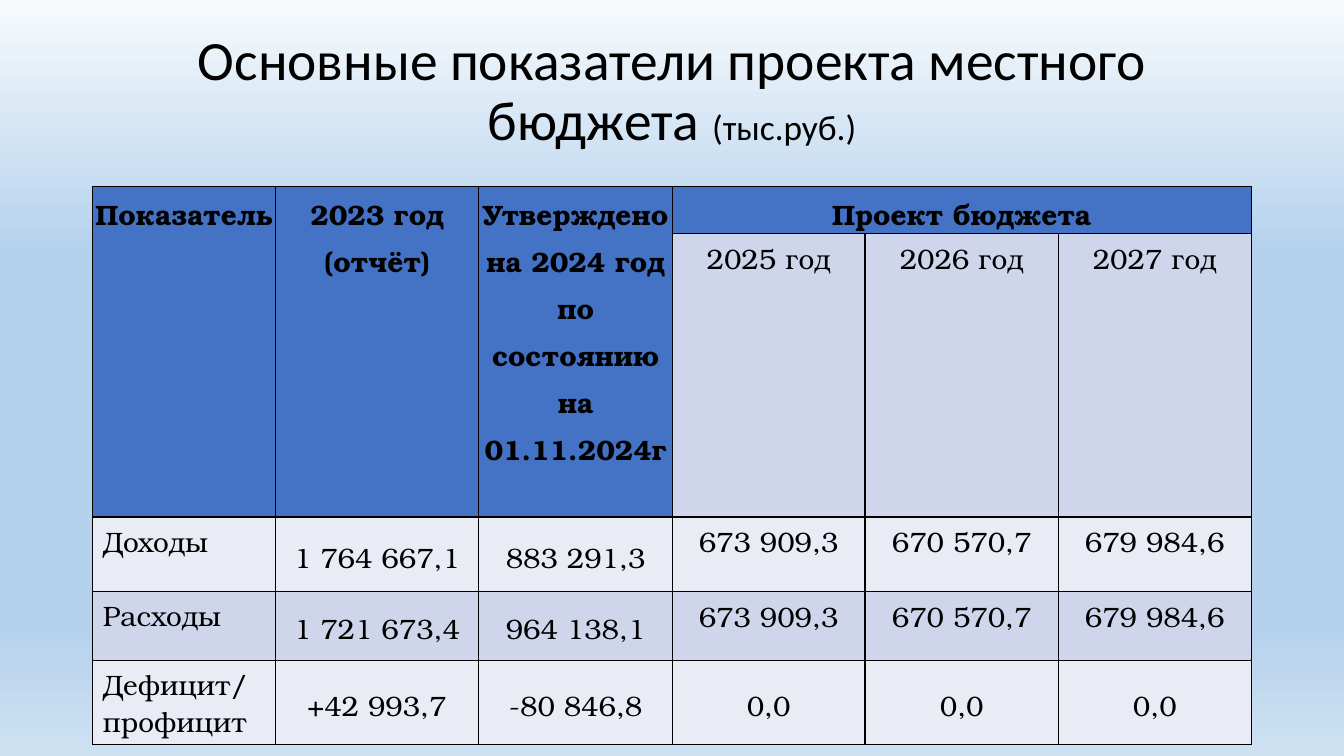
from lxml import etree
from pptx import Presentation
from pptx.dml.color import RGBColor
from pptx.enum.text import MSO_ANCHOR, PP_ALIGN
from pptx.oxml.ns import qn
from pptx.util import Pt

TOP, MIDDLE = MSO_ANCHOR.TOP, MSO_ANCHOR.MIDDLE
LEFT, CENTER = PP_ALIGN.LEFT, PP_ALIGN.CENTER
EMU_PER_PX = 9144
BLANK_LAYOUT = 6
COLORS = {
    "ink": "000000", "header": "4472C4", "dark_band": "CFD5EA", "light_band": "E9EBF5",
    "sky_top": "F7FAFD", "sky": "B5D2EC", "sky_bottom": "CEE1F2",
}
SKY_STOPS = [(0, "sky_top"), (33, "sky"), (83, "sky"), (100, "sky_bottom")]
TITLE_FONT, TABLE_FONT = "Calibri", "TeX Gyre Bonum"
COLUMN_WIDTHS = [181, 202, 192, 191, 192, 191]
ROW_HEIGHTS = [47, 281, 74, 68, 84]
ROW_FILLS = ["header", "dark_band", "light_band", "dark_band", "light_band"]
BUDGET_ROWS = [
    ["Показатель", "2023 год (отчёт)",
     "Утверждено на 2024 год\nпо состоянию на 01.11.2024г", "Проект бюджета", "", ""],
    ["", "", "", "2025 год", "2026 год", "2027 год"],
    ["Доходы", "1 764 667,1", "883 291,3", "673 909,3", "670 570,7", "679 984,6"],
    ["Расходы", "1 721 673,4", "964 138,1", "673 909,3", "670 570,7", "679 984,6"],
    ["Дефицит/профицит", "+42 993,7", "-80 846,8", "0,0", "0,0", "0,0"],
]
HEADER_ROWS = 2
YEAR_COLUMN = 3
BALANCE_ROW = 4


def px(length):
    return length * EMU_PER_PX


def color(name):
    return RGBColor.from_string(COLORS[name])


def style_span(span, font, size, bold=False):
    span.font.name = font
    span.font.size = Pt(size)
    span.font.bold = bold
    span.font.color.rgb = color("ink")


def paint_background(page):
    fill = page.background.fill
    fill.gradient()
    fill.gradient_angle = 270
    stops = page.element.find(".//" + qn("a:gsLst"))
    for stop in list(stops):
        stops.remove(stop)
    for percent, name in SKY_STOPS:
        stop = etree.SubElement(stops, qn("a:gs"), pos=str(percent * 1000))
        etree.SubElement(stop, qn("a:srgbClr"), val=COLORS[name])


def add_title(page, title, unit):
    box = page.shapes.add_textbox(px(92), px(40), px(1149), px(145))
    frame = box.text_frame
    frame.word_wrap = True
    frame.vertical_anchor = MIDDLE
    frame.margin_bottom = px(47)
    para = frame.paragraphs[0]
    para.alignment = CENTER
    para.line_spacing = 0.9
    for text, size in [(title, 39.6), (unit, 25.2)]:
        span = para.add_run()
        span.text = text
        style_span(span, TITLE_FONT, size)


def add_borders(cell):
    properties = cell._tc.get_or_add_tcPr()
    for position, side in enumerate(["a:lnL", "a:lnR", "a:lnT", "a:lnB"]):
        line = etree.Element(qn(side), w=str(Pt(1)))
        fill = etree.SubElement(line, qn("a:solidFill"))
        etree.SubElement(fill, qn("a:srgbClr"), val=COLORS["ink"])
        properties.insert(position, line)


def fill_cell(cell, text, row, column):
    is_header = row == 0 or (row < HEADER_ROWS and column < YEAR_COLUMN)
    is_label = row >= HEADER_ROWS and column == 0
    is_forecast = HEADER_ROWS <= row < BALANCE_ROW and column >= YEAR_COLUMN
    is_middle = row >= HEADER_ROWS and not is_label and not is_forecast
    cell.fill.solid()
    cell.fill.fore_color.rgb = color("header" if is_header else ROW_FILLS[row])
    add_borders(cell)
    cell.vertical_anchor = MIDDLE if is_middle else TOP
    if not is_label:
        cell.margin_left = cell.margin_right = px(2)
        cell.margin_top = cell.margin_bottom = 0
    cell.text_frame.text = text
    for para in cell.text_frame.paragraphs:
        para.alignment = LEFT if is_label else CENTER
        para.line_spacing = 1.0 if is_label else 1.15
        if is_forecast:
            para.space_after = Pt(10)
        for span in para.runs:
            style_span(span, TABLE_FONT, 20, is_header)


def add_budget_table(page):
    frame = page.shapes.add_table(
        len(ROW_HEIGHTS), len(COLUMN_WIDTHS), px(92), px(185),
        px(sum(COLUMN_WIDTHS)), px(sum(ROW_HEIGHTS)))
    table = frame.table
    for column, width in zip(table.columns, COLUMN_WIDTHS):
        column.width = px(width)
    for row, height in zip(table.rows, ROW_HEIGHTS):
        row.height = px(height)
    for row, texts in enumerate(BUDGET_ROWS):
        for column, text in enumerate(texts):
            fill_cell(table.cell(row, column), text, row, column)
    for column in range(YEAR_COLUMN):
        table.cell(0, column).merge(table.cell(1, column))
    table.cell(0, YEAR_COLUMN).merge(table.cell(0, len(COLUMN_WIDTHS) - 1))


def main():
    deck = Presentation()
    deck.slide_width, deck.slide_height = px(1333), px(750)
    page = deck.slides.add_slide(deck.slide_layouts[BLANK_LAYOUT])
    paint_background(page)
    add_title(page, "Основные показатели проекта местного бюджета ", "(тыс.руб.)")
    add_budget_table(page)
    deck.save("out.pptx")


if __name__ == "__main__":
    main()
